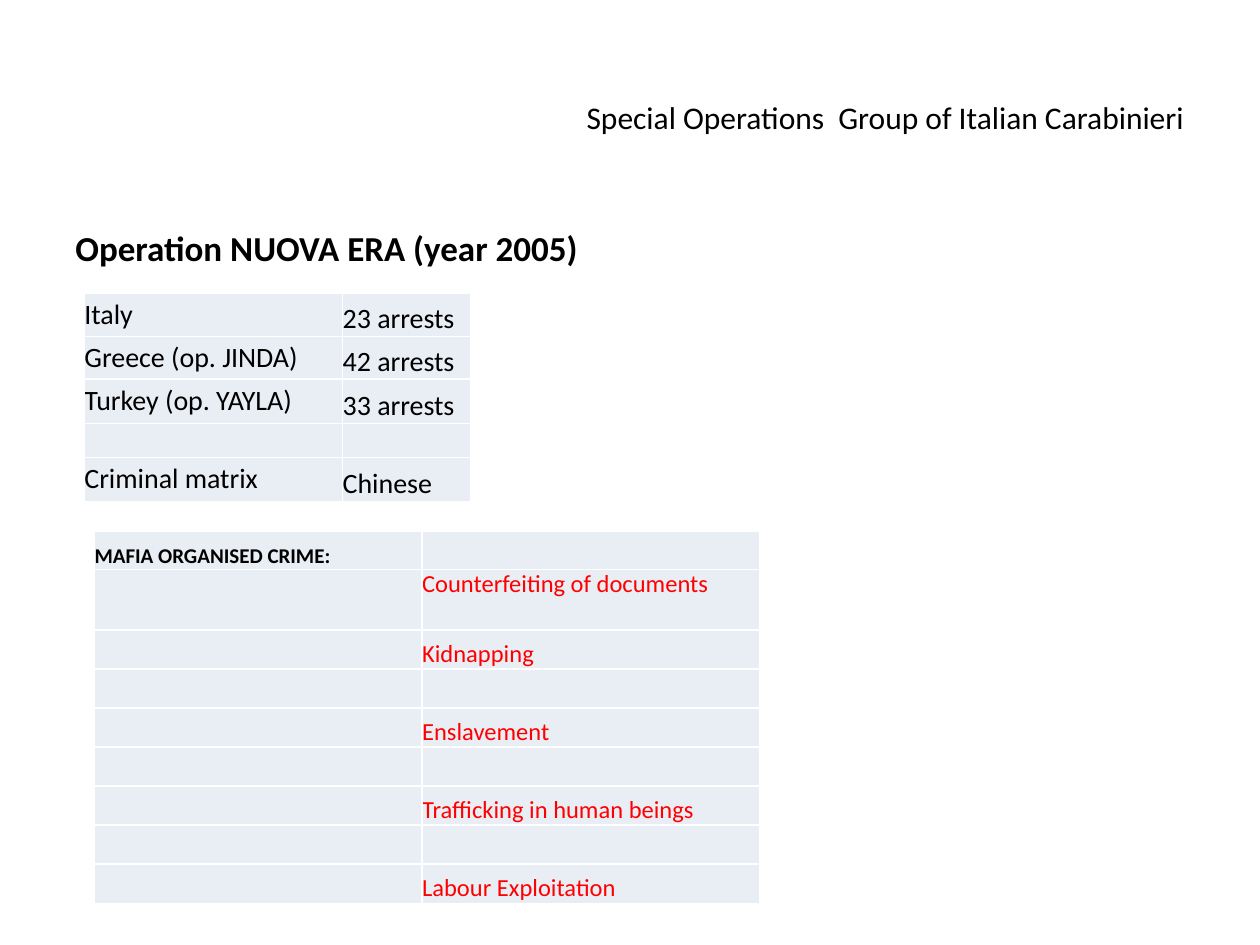
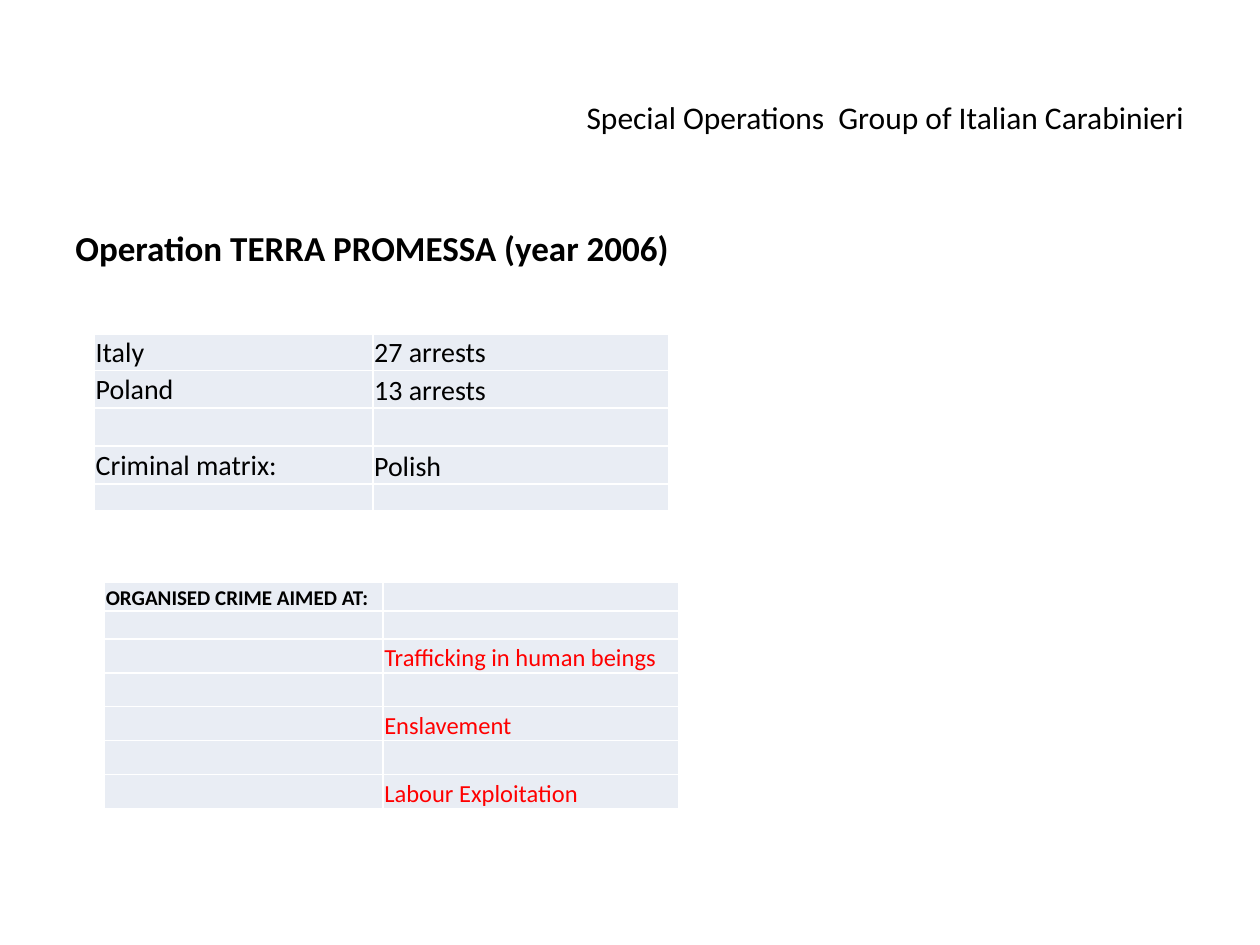
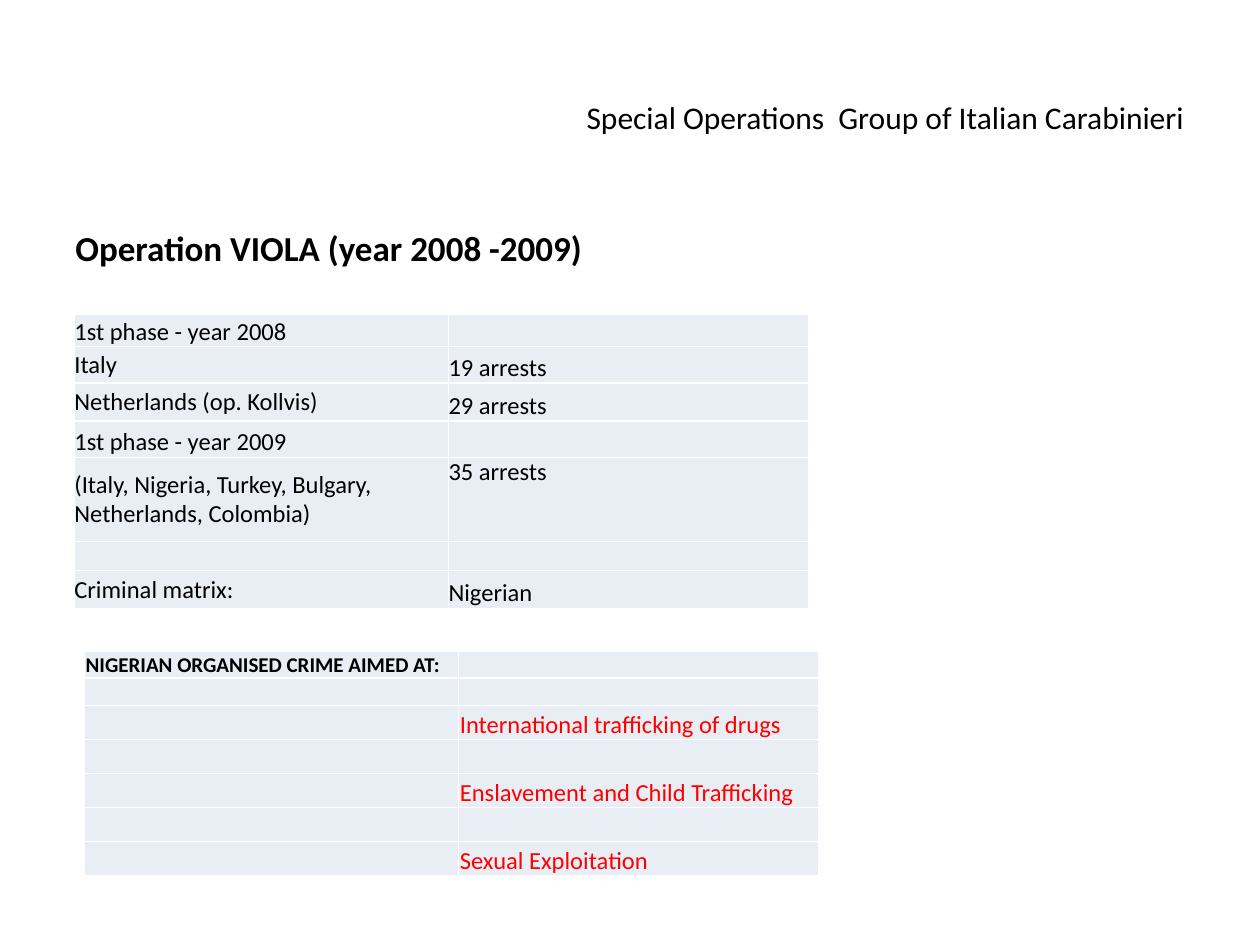
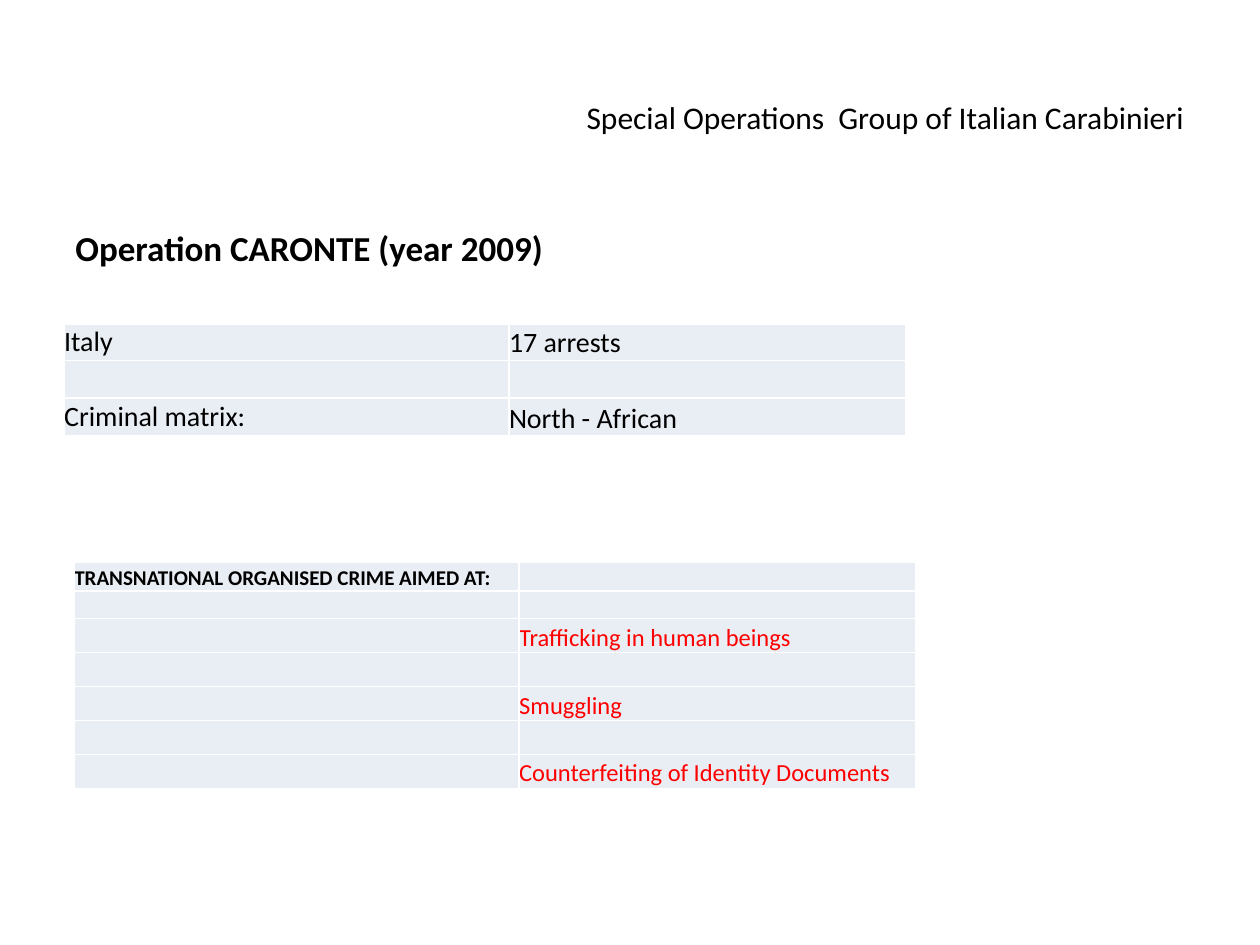
from pptx import Presentation
from pptx.dml.color import RGBColor
from pptx.enum.text import MSO_ANCHOR, PP_ALIGN
from pptx.oxml import parse_xml
from pptx.oxml.ns import nsdecls
from pptx.util import Inches, Pt

FONT = "Calibri"
COLORS = {"text": "000000", "crime": "FF0000", "cell": "E9EDF4", "border": "FFFFFF"}
UNIT = "Special Operations  Group of Italian Carabinieri"
MARGIN, CONTENT_W = 0.5, 9
TALL_ROW = 0.4
EMPTY_SIZE = 10
CRIME_ROWS = [0.23, 0.22] + [0.27] * 5

OPERATIONS = [
    {
        "name": "Operation NUOVA ERA (year 2005)",
        "facts": {
            "at": (0.67, 2.33), "cols": (2.05, 1.02), "size": 16,
            "heights": [0.34, 0.34, 0.35, 0.27, 0.35],
            "rows": [("Italy", "23 arrests"), ("Greece (op. JINDA)", "42 arrests"),
                     ("Turkey (op. YAYLA)", "33 arrests"), ("", ""),
                     ("Criminal matrix", "Chinese")],
        },
        "crimes": {
            "at": (0.75, 4.22), "cols": (2.6, 2.68),
            "heights": [0.3, 0.48] + [0.31] * 7,
            "heading": "MAFIA ORGANISED CRIME:",
            "items": ["Counterfeiting of documents", "Kidnapping", "", "Enslavement", "",
                      "Trafficking in human beings", "", "Labour Exploitation"],
        },
    },
    {
        "name": "Operation TERRA PROMESSA (year 2006)",
        "facts": {
            "at": (0.75, 2.65), "cols": (2.21, 2.35), "size": 16, "inset": 0.01,
            "heights": [0.29, 0.3, 0.3, 0.3, 0.21],
            "rows": [("Italy", "27 arrests"), ("Poland", "13 arrests"), ("", ""),
                     ("Criminal matrix:", "Polish"), ("", "")],
        },
        "crimes": {
            "at": (0.83, 4.62), "cols": (2.21, 2.35), "inset": 0.01,
            "heights": CRIME_ROWS,
            "heading": "ORGANISED CRIME AIMED AT:",
            "items": ["", "Trafficking in human beings", "", "Enslavement", "",
                      "Labour Exploitation"],
        },
    },
    {
        "name": "Operation VIOLA (year 2008 -2009)",
        "facts": {
            "at": (0.59, 2.49), "cols": (2.97, 2.86), "size": 14,
            "heights": [0.26, 0.29, 0.3, 0.29, 0.67, 0.23, 0.3],
            "rows": [("1st phase - year 2008", ""), ("Italy", "19 arrests"),
                     ("Netherlands (op. Kollvis)", "29 arrests"),
                     ("1st phase - year 2009", ""),
                     ("(Italy, Nigeria, Turkey, Bulgary, Netherlands, Colombia)",
                      "35 arrests"),
                     ("", ""), ("Criminal matrix:", "Nigerian")],
        },
        "crimes": {
            "at": (0.67, 5.17), "cols": (2.97, 2.86), "inset": 0.01,
            "heights": [0.21] + CRIME_ROWS[1:],
            "heading": "NIGERIAN ORGANISED CRIME AIMED AT:",
            "items": ["", "International trafficking of drugs", "",
                      "Enslavement and Child Trafficking", "", "Sexual Exploitation"],
        },
    },
    {
        "name": "Operation CARONTE (year 2009)",
        "facts": {
            "at": (0.51, 2.57), "cols": (3.53, 3.15), "size": 16,
            "heights": [0.29, 0.3, 0.3],
            "rows": [("Italy", "17 arrests"), ("", ""),
                     ("Criminal matrix:", "North - African")],
        },
        "crimes": {
            "at": (0.59, 4.46), "cols": (3.53, 3.15),
            "heights": CRIME_ROWS,
            "heading": "TRANSNATIONAL ORGANISED CRIME AIMED AT:",
            "items": ["", "Trafficking in human beings", "", "Smuggling", "",
                      "Counterfeiting of Identity Documents"],
        },
    },
]


def add_run(p, text, size, color="text", bold=False):
    r = p.add_run()
    r.text = text
    r.font.name = FONT
    r.font.size = Pt(size)
    r.font.bold = bold
    r.font.color.rgb = RGBColor.from_string(COLORS[color])


def add_unit_title(s):
    sp = s.shapes.title
    sp.left, sp.top = Inches(MARGIN), Inches(0.3)
    sp.width, sp.height = Inches(CONTENT_W), Inches(1.25)
    tf = sp.text_frame
    tf.vertical_anchor = MSO_ANCHOR.MIDDLE
    p = tf.paragraphs[0]
    p.alignment = PP_ALIGN.RIGHT
    add_run(p, UNIT, 18)


def add_operation_name(s, name):
    sp = s.shapes.add_textbox(Inches(MARGIN), Inches(1.75), Inches(CONTENT_W), Inches(4.95))
    tf = sp.text_frame
    tf.word_wrap = True
    p = tf.paragraphs[0]
    p.space_before = Pt(4)
    add_run(p, name, 20, bold=True)


def style_cell(cell, inset):
    cell.margin_left = cell.margin_right = cell.margin_top = Inches(inset)
    cell.margin_bottom = 0
    tcPr = cell._tc.get_or_add_tcPr()
    for side in ("lnL", "lnR", "lnT", "lnB"):
        tcPr.append(parse_xml(
            f'<a:{side} {nsdecls("a")} w="{Pt(1)}"><a:solidFill>'
            f'<a:srgbClr val="{COLORS["border"]}"/></a:solidFill></a:{side}>'))
    cell.fill.solid()
    cell.fill.fore_color.rgb = RGBColor.from_string(COLORS["cell"])


def add_grid(s, at, cols, heights, inset=0):
    x, y = at
    frame = s.shapes.add_table(len(heights), len(cols), Inches(x), Inches(y),
                               Inches(sum(cols)), Inches(sum(heights)))
    table = frame.table
    table.first_row = table.horz_banding = False
    for column, width in zip(table.columns, cols):
        column.width = Inches(width)
    for row, height in zip(table.rows, heights):
        row.height = Inches(height)
        for cell in row.cells:
            style_cell(cell, inset)
    return table


def write_cell(cell, text, anchor, size, color="text", bold=False):
    p = cell.text_frame.paragraphs[0]
    if text:
        cell.vertical_anchor = anchor
        add_run(p, text, size, color, bold)
    else:
        p._p.get_or_add_endParaRPr().set("sz", str(EMPTY_SIZE * 100))


def value_anchor(height):
    return MSO_ANCHOR.TOP if height > TALL_ROW else MSO_ANCHOR.BOTTOM


def add_facts(s, rows, size, heights, **grid):
    table = add_grid(s, heights=heights, **grid)
    for i, (label, value) in enumerate(rows):
        label_anchor = MSO_ANCHOR.MIDDLE if value else MSO_ANCHOR.BOTTOM
        write_cell(table.cell(i, 0), label, label_anchor, size)
        write_cell(table.cell(i, 1), value, value_anchor(heights[i]), size)


def add_crimes(s, heading, items, heights, **grid):
    table = add_grid(s, heights=heights, **grid)
    write_cell(table.cell(0, 0), heading, MSO_ANCHOR.BOTTOM, 12, bold=True)
    write_cell(table.cell(0, 1), "", None, 12)
    for i, crime in enumerate(items, start=1):
        write_cell(table.cell(i, 0), "", None, 14)
        write_cell(table.cell(i, 1), crime, value_anchor(heights[i]), 14, "crime")


def main():
    prs = Presentation()
    prs.slide_width, prs.slide_height = Inches(10), Inches(7.5)
    title_only = prs.slide_layouts[5]
    for operation in OPERATIONS:
        s = prs.slides.add_slide(title_only)
        add_unit_title(s)
        add_operation_name(s, operation["name"])
        add_facts(s, **operation["facts"])
        add_crimes(s, **operation["crimes"])
    prs.save("out.pptx")


if __name__ == "__main__":
    main()
